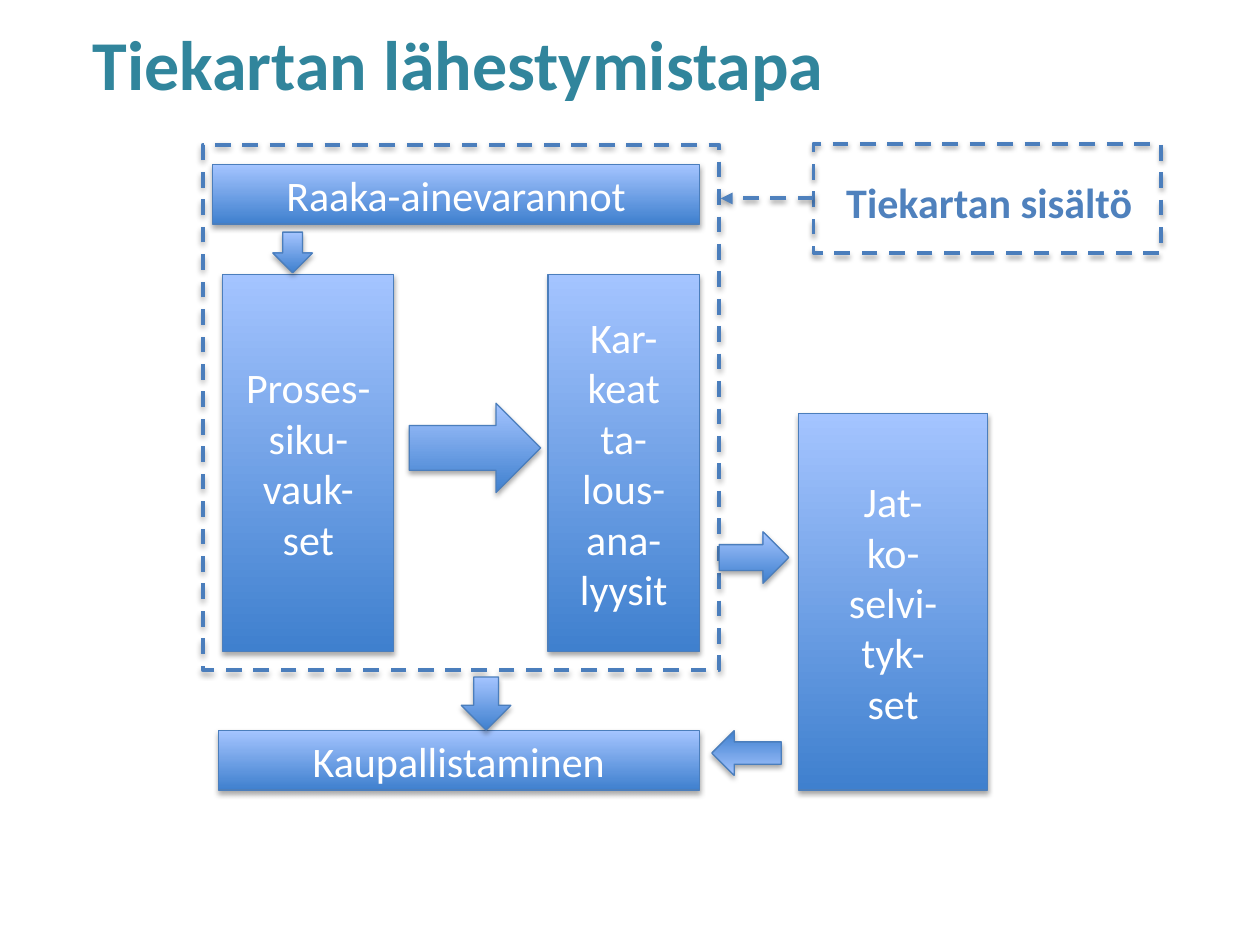
from lxml import etree
from pptx import Presentation
from pptx import util as u
from pptx.dml.color import RGBColor
from pptx.enum import dml, shapes, text
from pptx.oxml import ns

COLORS = {
    "title": "31859C",
    "label": "4F81BD",
    "outline": "4B7EBC",
    "gradient_bottom": "3F80CE",
    "gradient_top": "A4C4FF",
    "white": "FFFFFF",
    "shadow": "000000",
}


def write_text(frame, content, size=24, color="white", bold=False, align=text.PP_ALIGN.CENTER):
    frame.word_wrap = True
    frame.text = content
    for paragraph in frame.paragraphs:
        paragraph.alignment = align
        paragraph.font.name = "Calibri"
        paragraph.font.size = u.Pt(size)
        paragraph.font.bold = bold
        paragraph.font.color.rgb = RGBColor.from_string(COLORS[color])


def add_shadow(properties, opacity, distance):
    effects = properties.find(ns.qn("a:effectLst"))
    if effects is None:
        effects = etree.SubElement(properties, ns.qn("a:effectLst"))
    shadow = etree.SubElement(
        effects, ns.qn("a:outerShdw"), blurRad=str(u.Pt(3.1)), dist=str(u.Pt(distance)),
        dir="5400000", rotWithShape="0")
    color = etree.SubElement(shadow, ns.qn("a:srgbClr"), val=COLORS["shadow"])
    etree.SubElement(color, ns.qn("a:alpha"), val=str(opacity * 1000))


presentation = Presentation()
presentation.slide_width = u.Cm(25.4)
presentation.slide_height = u.Cm(19.05)
slide = presentation.slides.add_slide(presentation.slide_layouts[5])

title = slide.shapes.title
title.left, title.top, title.width, title.height = u.Cm(1.3), u.Cm(0.53), u.Cm(24.59), u.Cm(3.18)
write_text(title.text_frame, "Tiekartan lähestymistapa", size=40, color="title", bold=True,
           align=text.PP_ALIGN.LEFT)
title.text_frame.auto_size = text.MSO_AUTO_SIZE.NONE
title.text_frame.vertical_anchor = text.MSO_ANCHOR.MIDDLE
title.text_frame.margin_left = u.Cm(0.57)
title.text_frame.margin_top = 0
title.text_frame.margin_bottom = u.Cm(1.73)

RECTANGLE = shapes.MSO_SHAPE.RECTANGLE
RIGHT = shapes.MSO_SHAPE.RIGHT_ARROW
DOWN = shapes.MSO_SHAPE.DOWN_ARROW

filled_shapes = [
    (RECTANGLE, 4.29, 3.32, 9.81, 1.2, 0, "Raaka-ainevarannot"),
    (RECTANGLE, 4.49, 5.53, 3.45, 7.6, 0, "Proses-\nsiku-vauk-\nset"),
    (RECTANGLE, 11.05, 5.53, 3.05, 7.6, 0, "Kar-keat ta-lous-ana-lyysit"),
    (RECTANGLE, 16.1, 8.33, 3.81, 7.6, 0, "Jat-\nko-\nselvi-\ntyk-\nset"),
    (RECTANGLE, 4.4, 14.73, 9.7, 1.2, 0, "Kaupallistaminen"),
    (RIGHT, 8.25, 8.13, 2.65, 1.8, 0, ""),
    (RIGHT, 14.35, 14.73, 1.4, 0.9, 180, ""),
    (RIGHT, 14.5, 10.72, 1.4, 1.04, 0, ""),
    (DOWN, 5.5, 4.68, 0.8, 0.82, 0, ""),
    (DOWN, 9.3, 13.65, 1.0, 1.07, 0, ""),
]
dashed_frames = [
    (4.09, 2.92, 10.41, 10.59),
    (16.4, 2.9, 7.0, 2.2),
]

for left, top, width, height in dashed_frames:
    frame = slide.shapes.add_shape(RECTANGLE, u.Cm(left), u.Cm(top), u.Cm(width), u.Cm(height))
    frame.fill.background()
    frame.line.color.rgb = RGBColor.from_string(COLORS["outline"])
    frame.line.width = u.Pt(2.25)
    frame.line.dash_style = dml.MSO_LINE.DASH
    frame.shadow.inherit = False
    add_shadow(frame.element.spPr, 35, 1.8)

for kind, left, top, width, height, rotation, content in filled_shapes:
    shape = slide.shapes.add_shape(kind, u.Cm(left), u.Cm(top), u.Cm(width), u.Cm(height))
    shape.rotation = rotation
    shape.fill.gradient()
    shape.fill.gradient_angle = 90
    for stop, name in zip(shape.fill.gradient_stops, ("gradient_bottom", "gradient_top")):
        stop.color.rgb = RGBColor.from_string(COLORS[name])
    shape.line.color.rgb = RGBColor.from_string(COLORS["outline"])
    shape.line.width = u.Pt(0.75)
    shape.shadow.inherit = False
    add_shadow(shape.element.spPr, 35, 1.8)
    if content:
        write_text(shape.text_frame, content)
        shape.text_frame.vertical_anchor = text.MSO_ANCHOR.MIDDLE

label = slide.shapes.add_textbox(u.Cm(16.81), u.Cm(3.43), u.Cm(6.48), u.Cm(1.27))
write_text(label.text_frame, "Tiekartan sisältö", color="label", bold=True,
           align=text.PP_ALIGN.LEFT)
label.text_frame.auto_size = text.MSO_AUTO_SIZE.SHAPE_TO_FIT_TEXT

connector = slide.shapes.add_connector(
    shapes.MSO_CONNECTOR.STRAIGHT, u.Cm(16.4), u.Cm(4), u.Cm(14.53), u.Cm(4))
connector.begin_connect(frame, 1)
connector.line.color.rgb = RGBColor.from_string(COLORS["label"])
connector.line.width = u.Pt(2.25)
connector.line.dash_style = dml.MSO_LINE.DASH
etree.SubElement(connector.line._get_or_add_ln(), ns.qn("a:tailEnd"), type="triangle")
add_shadow(connector.element.spPr, 38, 1.6)

presentation.save("out.pptx")
